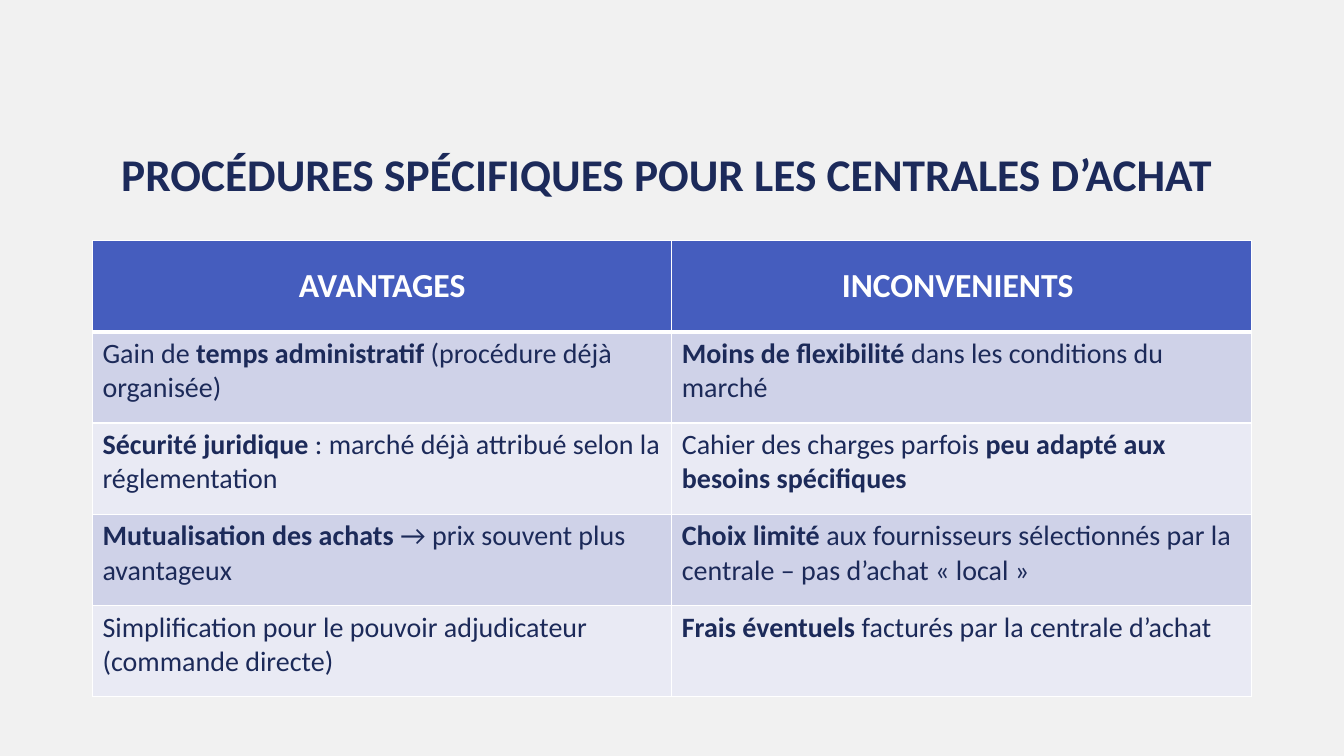
from dataclasses import dataclass

import pptx
import pptx.dml.color
import pptx.enum.text
import pptx.oxml
import pptx.oxml.ns
import pptx.util
from pptx.util import Cm

RGB = pptx.dml.color.RGBColor.from_string
ALIGN = pptx.enum.text.PP_ALIGN
ANCHOR = pptx.enum.text.MSO_ANCHOR


@dataclass(frozen=True)
class Theme:
    font: str = "Calibri"
    background: str = "F1F1F1"
    title_ink: str = "1C2A5A"
    body_ink: str = "1C2A59"
    white: str = "FFFFFF"
    header_fill: str = "455DBE"
    band_fills: tuple[str, str] = ("CFD2E8", "E9EAF4")
    title_size: float = 32.4
    header_size: float = 24
    body_size: float = 20
    grid_width: float = 1
    header_rule_width: float = 3


@dataclass(frozen=True)
class Piece:
    text: str
    bold: bool = False


@dataclass(frozen=True)
class Comparison:
    advantage: tuple[Piece, ...]
    drawback: tuple[Piece, ...]


THEME = Theme()
TITLE = "PROCÉDURES SPÉCIFIQUES POUR LES CENTRALES D’ACHAT"
HEADINGS = ("AVANTAGES", "INCONVENIENTS ")
COMPARISONS = (
    Comparison(
        (Piece("Gain de "), Piece("temps administratif", True),
         Piece(" (procédure déjà organisée)")),
        (Piece("Moins de flexibilité", True), Piece(" dans les conditions du marché")),
    ),
    Comparison(
        (Piece("Sécurité juridique", True),
         Piece(" : marché déjà attribué selon la réglementation")),
        (Piece("Cahier des charges parfois "),
         Piece("peu adapté aux besoins spécifiques", True)),
    ),
    Comparison(
        (Piece("Mutualisation des achats", True),
         Piece(" → prix souvent plus avantageux")),
        (Piece("Choix limité", True),
         Piece(" aux fournisseurs sélectionnés par la centrale – pas d’achat « local »")),
    ),
    Comparison(
        (Piece("Simplification pour le pouvoir adjudicateur (commande directe)"),),
        (Piece("Frais éventuels", True), Piece(" facturés par la centrale d’achat")),
    ),
)

LEFT, COLUMN_WIDTH = Cm(2.33), Cm(14.6)
TITLE_TOP, TITLE_HEIGHT = Cm(2.33), Cm(3.25)
TABLE_TOP, ROW_HEIGHT = Cm(6.06), Cm(2.3)


def write_pieces(paragraph, pieces: tuple[Piece, ...], size: float, ink: str) -> None:
    for piece in pieces:
        run = paragraph.add_run()
        run.text = piece.text
        run.font.name = THEME.font
        run.font.size = pptx.util.Pt(size)
        run.font.bold = piece.bold
        run.font.color.rgb = RGB(ink)


def set_borders(cell, top: float, bottom: float) -> None:
    """Draw white cell borders; widths are in points. Call before filling the cell."""
    widths = {"lnL": THEME.grid_width, "lnR": THEME.grid_width, "lnT": top, "lnB": bottom}
    for side, width in widths.items():
        cell._tc.get_or_add_tcPr().append(pptx.oxml.parse_xml(
            f'<a:{side} {pptx.oxml.ns.nsdecls("a")} w="{pptx.util.Pt(width)}">'
            f'<a:solidFill><a:srgbClr val="{THEME.white}"/></a:solidFill></a:{side}>'))


def add_title(slide) -> None:
    frame = slide.shapes.add_textbox(LEFT, TITLE_TOP, 2 * COLUMN_WIDTH, TITLE_HEIGHT).text_frame
    frame.word_wrap = True
    frame.vertical_anchor = ANCHOR.BOTTOM
    frame.margin_left, frame.margin_right = Cm(0), Cm(0.25)
    frame.margin_top, frame.margin_bottom = Cm(0.13), Cm(0.51)
    heading = frame.paragraphs[0]
    heading.alignment = ALIGN.CENTER
    heading.line_spacing = 0.9
    write_pieces(heading, (Piece(TITLE, True),), THEME.title_size, THEME.title_ink)


def add_comparison_table(slide) -> None:
    row_count = len(COMPARISONS) + 1
    table = slide.shapes.add_table(row_count, len(HEADINGS), LEFT, TABLE_TOP,
                                   len(HEADINGS) * COLUMN_WIDTH, row_count * ROW_HEIGHT).table
    for row in table.rows:
        row.height = ROW_HEIGHT
    for column, heading in enumerate(HEADINGS):
        cell = table.cell(0, column)
        set_borders(cell, THEME.grid_width, THEME.header_rule_width)
        cell.fill.solid()
        cell.fill.fore_color.rgb = RGB(THEME.header_fill)
        cell.vertical_anchor = ANCHOR.MIDDLE
        paragraph = cell.text_frame.paragraphs[0]
        paragraph.alignment = ALIGN.CENTER
        write_pieces(paragraph, (Piece(heading, True),), THEME.header_size, THEME.white)
    for row_index, comparison in enumerate(COMPARISONS, start=1):
        top = THEME.header_rule_width if row_index == 1 else THEME.grid_width
        for column, pieces in enumerate((comparison.advantage, comparison.drawback)):
            cell = table.cell(row_index, column)
            set_borders(cell, top, THEME.grid_width)
            cell.fill.solid()
            cell.fill.fore_color.rgb = RGB(THEME.band_fills[(row_index - 1) % 2])
            write_pieces(cell.text_frame.paragraphs[0], pieces, THEME.body_size, THEME.body_ink)


def main() -> None:
    presentation = pptx.Presentation()
    presentation.slide_width, presentation.slide_height = Cm(33.87), Cm(19.05)
    slide = presentation.slides.add_slide(presentation.slide_layouts[6])
    slide.background.fill.solid()
    slide.background.fill.fore_color.rgb = RGB(THEME.background)
    add_title(slide)
    add_comparison_table(slide)
    presentation.save("out.pptx")


if __name__ == "__main__":
    main()
